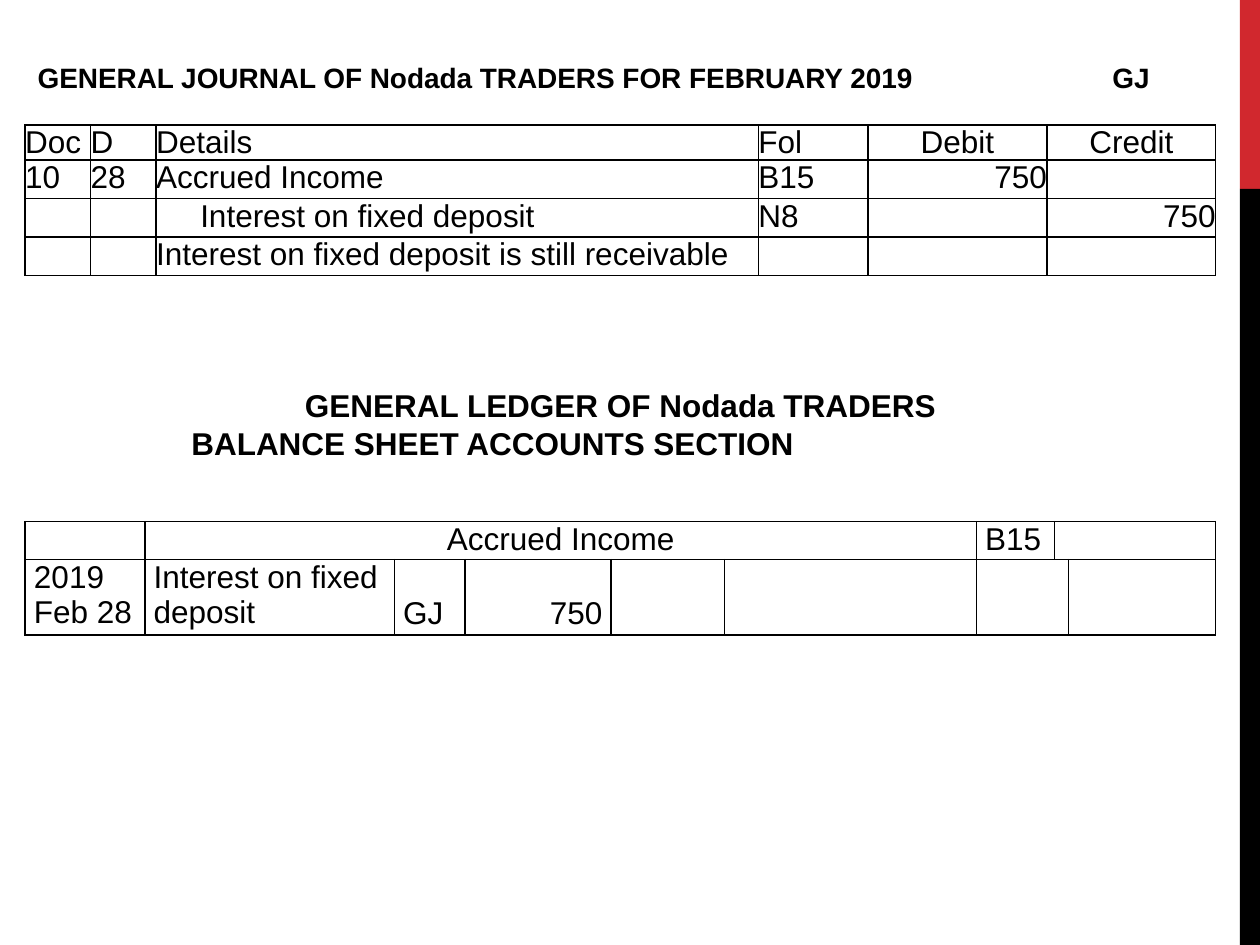
from dataclasses import dataclass, field

from lxml.etree import SubElement
from pptx import Presentation
from pptx.dml.color import RGBColor
from pptx.enum.shapes import MSO_SHAPE as Preset
from pptx.enum.text import MSO_ANCHOR as Anchor, PP_ALIGN as Align
from pptx.oxml.ns import qn
from pptx.util import Inches, Pt

SLIDE_W, SLIDE_H = 10, 7.5
LEFT, WIDTH = 0.2, 9.45  # shared column of headings and tables
FONT, BLACK, RED = "Arial", "000000", "D1282E"
LINE_PT = 1


@dataclass(frozen=True)
class Entry:
    text: str
    align: Align = Align.LEFT
    indent: float = 0
    anchor: Anchor = Anchor.TOP
    bottom: float = 0


@dataclass(frozen=True)
class Grid:
    top: float
    columns: list[float]
    rows: list[float]
    entries: dict[tuple[int, int], Entry]
    side_inset: float = 0
    # (row, first column, last column)
    merges: list[tuple[int, int, int]] = field(default_factory=list)


@dataclass(frozen=True)
class Heading:
    text: str
    align: Align = Align.LEFT
    indent: float = 0
    tab: float = 0


def colour(value: str) -> RGBColor:
    return RGBColor.from_string(value)


def style(paragraph, size: float, align: Align, indent: float, bold: bool = False) -> None:
    paragraph.alignment = align
    if indent:
        properties = paragraph._p.get_or_add_pPr()
        properties.set("marL", str(Inches(indent)))
        properties.set("indent", "0")
    for run in paragraph.runs:
        run.font.name, run.font.size, run.font.bold = FONT, Pt(size), bold
        run.font.color.rgb = colour(BLACK)


def draw_bar(slide, top: float, height: float, fill: str) -> None:
    """Side bar; top and height are shares of the slide's height."""
    bar_w = 0.016 * SLIDE_W
    bar = slide.shapes.add_shape(
        Preset.RECTANGLE, Inches(SLIDE_W - bar_w), Inches(top * SLIDE_H),
        Inches(bar_w), Inches(height * SLIDE_H))
    bar.shadow.inherit = False
    bar.fill.solid()
    bar.fill.fore_color.rgb = colour(fill)
    bar.line.fill.background()


def draw_headings(slide, top: float, height: float, size: float,
                  headings: list[Heading]) -> None:
    box = slide.shapes.add_textbox(
        Inches(LEFT), Inches(top), Inches(WIDTH), Inches(height))
    frame = box.text_frame
    frame.word_wrap = True
    frame.vertical_anchor = Anchor.MIDDLE
    frame.text = "\n".join(heading.text for heading in headings)
    for paragraph, heading in zip(frame.paragraphs, headings):
        style(paragraph, size, heading.align, heading.indent, bold=True)
        if heading.tab:
            stops = SubElement(paragraph._p.get_or_add_pPr(), qn("a:tabLst"))
            SubElement(stops, qn("a:tab"), pos=str(Inches(heading.tab)), algn="l")


def add_borders(cell) -> None:
    properties = cell._tc.get_or_add_tcPr()
    for side in ("a:lnL", "a:lnR", "a:lnT", "a:lnB"):
        line = SubElement(properties, qn(side), w=str(Pt(LINE_PT)))
        SubElement(SubElement(line, qn("a:solidFill")), qn("a:srgbClr"), val=BLACK)


def draw_grid(slide, grid: Grid) -> None:
    table = slide.shapes.add_table(
        len(grid.rows), len(grid.columns), Inches(LEFT), Inches(grid.top),
        Inches(WIDTH), Inches(sum(grid.rows))).table
    table.first_row = table.horz_banding = False
    for column, width in zip(table.columns, grid.columns):
        column.width = Inches(width)
    for row, height in zip(table.rows, grid.rows):
        row.height = Inches(height)
    for row, first, last in grid.merges:
        table.cell(row, first).merge(table.cell(row, last))

    for r in range(len(grid.rows)):
        for c in range(len(grid.columns)):
            cell = table.cell(r, c)
            if cell.is_spanned:
                continue
            entry = grid.entries.get((r, c), Entry(""))
            cell.margin_left = cell.margin_right = Inches(grid.side_inset)
            cell.margin_top, cell.margin_bottom = 0, Inches(entry.bottom)
            cell.vertical_anchor = entry.anchor
            add_borders(cell)
            cell.fill.background()
            cell.text_frame.text = entry.text
            style(cell.text_frame.paragraphs[0], 18, entry.align, entry.indent)


JOURNAL = Grid(
    top=0.99,
    columns=[0.52, 0.52, 4.78, 0.87, 1.42, 1.34],
    rows=[0.28] * 4,
    entries={
        (0, 0): Entry("Doc"),
        (0, 1): Entry("D"),
        (0, 2): Entry("Details"),
        (0, 3): Entry("Fol"),
        (0, 4): Entry("Debit", Align.CENTER),
        (0, 5): Entry("Credit", Align.CENTER),
        (1, 0): Entry("10"),
        (1, 1): Entry("28"),
        (1, 2): Entry("Accrued Income"),
        (1, 3): Entry("B15"),
        (1, 4): Entry("750", Align.RIGHT),
        (2, 2): Entry("Interest on fixed deposit", indent=0.35),
        (2, 3): Entry("N8"),
        (2, 5): Entry("750", Align.RIGHT),
        (3, 2): Entry("Interest on fixed deposit is still receivable"),
    },
)

LEDGER = Grid(
    top=4.14,
    columns=[0.95, 1.98, 0.56, 1.16, 0.9, 2, 0.62, 0.11, 1.17],
    rows=[0.3, 0.6],
    side_inset=0.07,
    merges=[(0, 1, 5), (0, 7, 8), (1, 6, 7)],
    entries={
        (0, 1): Entry("Accrued Income", Align.CENTER),
        (0, 6): Entry("B15"),
        (1, 0): Entry("2019 Feb 28"),
        (1, 1): Entry("Interest on fixed deposit"),
        (1, 2): Entry("GJ", anchor=Anchor.BOTTOM, bottom=0.03),
        (1, 3): Entry("750", Align.RIGHT, anchor=Anchor.BOTTOM, bottom=0.03),
    },
)


def main() -> None:
    deck = Presentation()
    deck.slide_width, deck.slide_height = Inches(SLIDE_W), Inches(SLIDE_H)
    slide = deck.slides.add_slide(deck.slide_layouts[6])

    # Side bars
    draw_bar(slide, 0, 0.2, RED)
    draw_bar(slide, 0.2, 0.8, BLACK)

    # General journal
    draw_grid(slide, JOURNAL)
    draw_headings(slide, 0.43, 0.37, 16, [
        Heading("GENERAL JOURNAL OF Nodada TRADERS FOR FEBRUARY 2019\tGJ", tab=8.53)])

    # General ledger
    draw_grid(slide, LEDGER)
    draw_headings(slide, 3.01, 0.71, 18, [
        Heading("GENERAL LEDGER OF Nodada TRADERS", Align.CENTER),
        Heading("BALANCE SHEET ACCOUNTS SECTION", indent=1.22)])

    deck.save("out.pptx")


if __name__ == "__main__":
    main()
